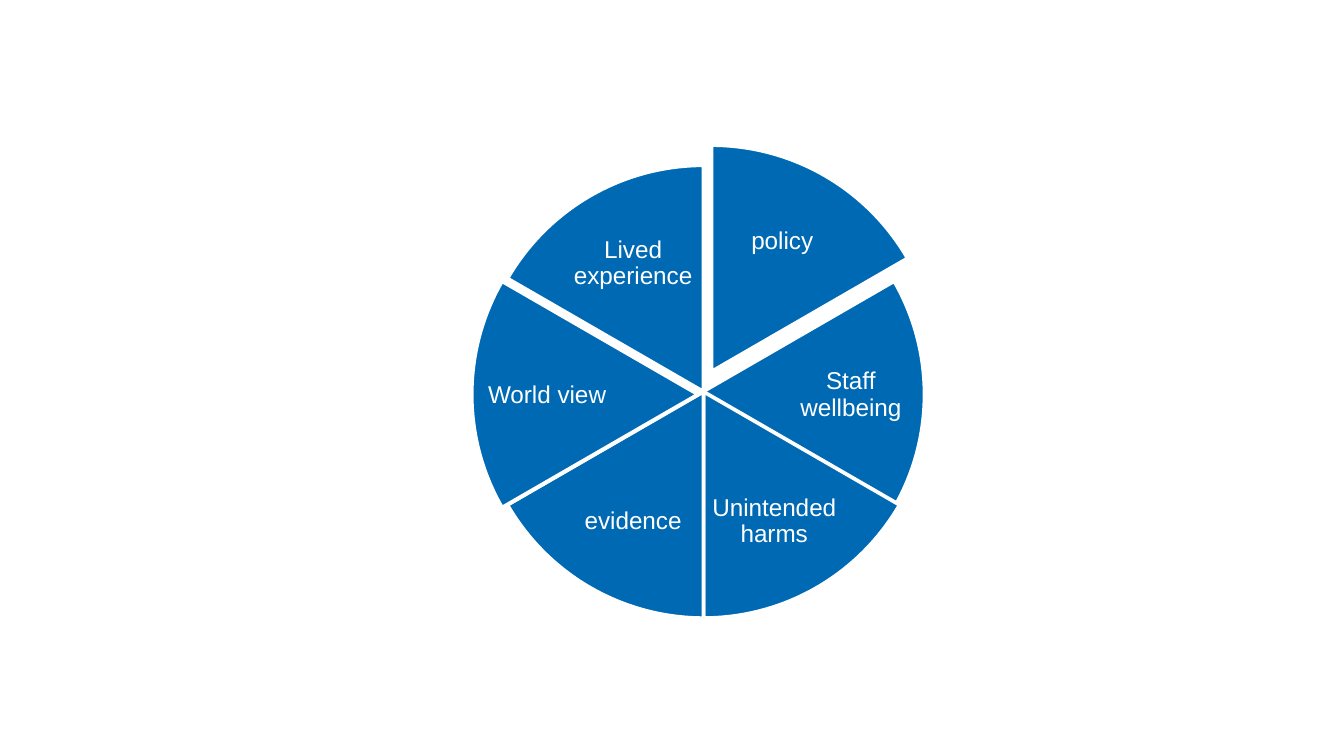
from pptx import Presentation
from pptx.dml.color import RGBColor
from pptx.enum.shapes import MSO_SHAPE
from pptx.enum.text import MSO_ANCHOR, PP_ALIGN
from pptx.util import Inches, Pt


def color(hex_text):
    return RGBColor.from_string(hex_text)


BLUE, WHITE = "0069B4", "FFFFFF"
DIAMETER = 3.37
SLICE_ANGLE = 60
ANGLE_UNIT = 0.6  # one degree is 60000 units; adjustments count in 100000

# Widescreen slide, 16:9
presentation = Presentation()
presentation.slide_width = Inches(10)
presentation.slide_height = Inches(10) * 9 // 16
slide = presentation.slides.add_slide(presentation.slide_layouts[6])
wheel = slide.shapes.add_group_shape()

# Clockwise from the top: label, slice left and top, label box
slices = [
    ("policy", (3.61, 1.08), (5.33, 1.44, 0.98, 0.72)),
    ("Staff wellbeing", (3.51, 1.25), (5.82, 2.6, 1.02, 0.68)),
    ("Unintended harms", (3.55, 1.23), (5.27, 3.52, 0.98, 0.72)),
    ("evidence", (3.55, 1.23), (4.22, 3.52, 0.98, 0.72)),
    ("World view", (3.51, 1.25), (3.56, 2.6, 1.02, 0.68)),
    ("Lived experience", (3.55, 1.23), (4.22, 1.6, 0.98, 0.72)),
]
frame_format = {
    "word_wrap": True,
    "vertical_anchor": MSO_ANCHOR.MIDDLE,
    "margin_left": Inches(0.02),
    "margin_top": Inches(0.02),
    "margin_right": Inches(0.02),
    "margin_bottom": Inches(0.02),
}
paragraph_format = {"alignment": PP_ALIGN.CENTER, "line_spacing": 0.9}
font_format = {"name": "Arial", "size": Pt(13)}

for index, (label, (left, top), label_box) in enumerate(slices):
    # Slice
    start = (270 + index * SLICE_ANGLE) % 360
    end = (start + SLICE_ANGLE) % 360
    shape = wheel.shapes.add_shape(
        MSO_SHAPE.PIE, Inches(left), Inches(top), Inches(DIAMETER), Inches(DIAMETER)
    )
    shape.adjustments[0] = start * ANGLE_UNIT
    shape.adjustments[1] = end * ANGLE_UNIT
    shape.shadow.inherit = False
    shape.fill.solid()
    shape.fill.fore_color.rgb = color(BLUE)
    shape.line.color.rgb = color(WHITE)
    shape.line.width = Pt(2)

    # Label
    text_box = wheel.shapes.add_textbox(*(Inches(length) for length in label_box))
    text_frame = text_box.text_frame
    paragraph = text_frame.paragraphs[0]
    paragraph.text = label
    for target, values in (
        (text_frame, frame_format),
        (paragraph, paragraph_format),
        (paragraph.runs[0].font, font_format),
    ):
        for name, value in values.items():
            setattr(target, name, value)
    paragraph.runs[0].font.color.rgb = color(WHITE)

presentation.save("out.pptx")
